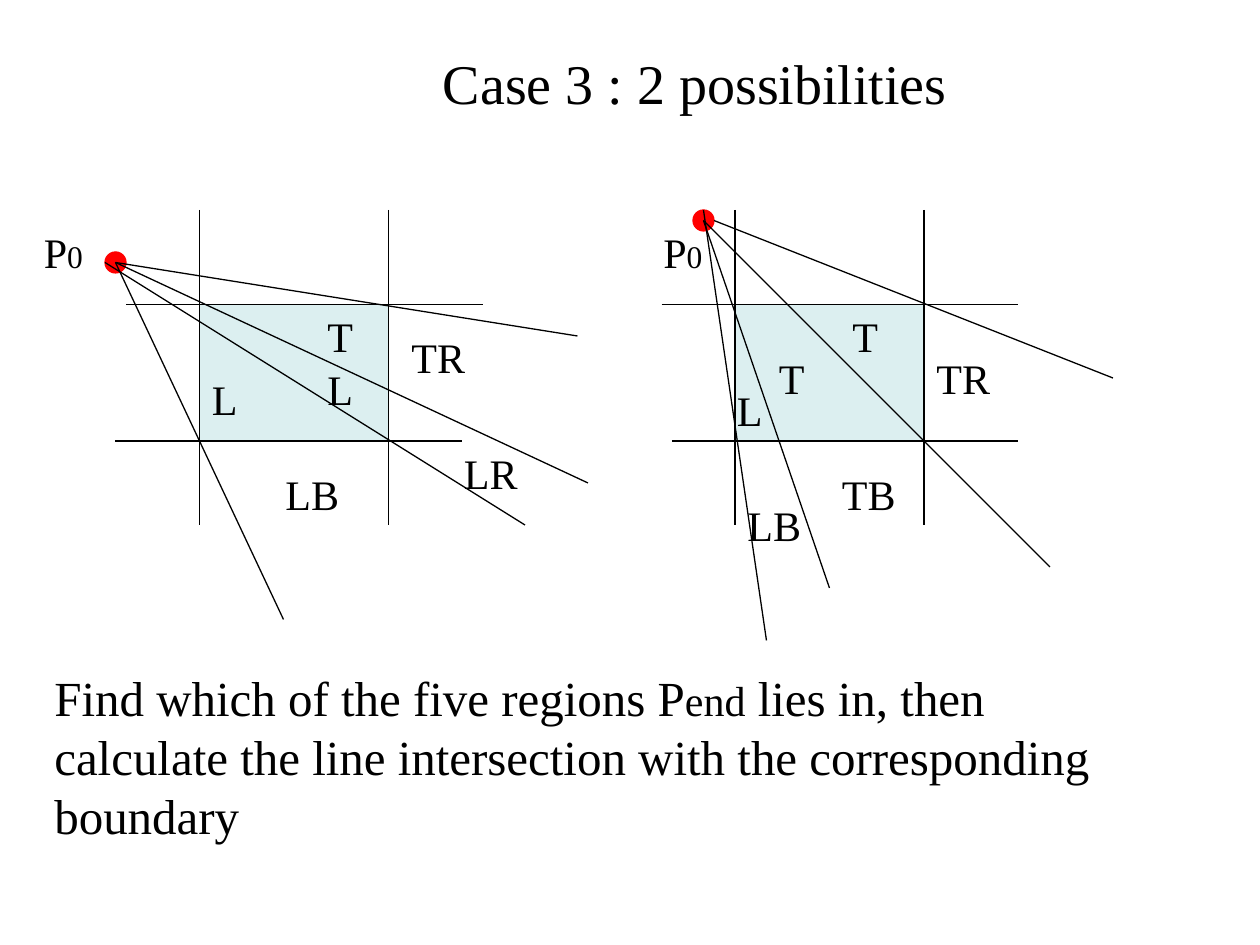
from lxml import etree
from pptx import Presentation
from pptx import util as u
from pptx.dml.color import RGBColor
from pptx.enum import shapes, text
from pptx.oxml.ns import qn

COLORS = {"ink": "000000", "point": "FF0000", "window": "BBE0E3"}
FONT = "Times New Roman"
WINDOW_TOP, WINDOW_WIDTH, WINDOW_HEIGHT = 174, 108, 78
WINDOW_BOTTOM = WINDOW_TOP + WINDOW_HEIGHT
GRID_TOP, GRID_BOTTOM = 120, 300
POINT_SIZE = 12

CASES = [
    {
        "window_left": 114,
        "top_edge": (72, 276),
        "bottom_edge": (66, 264),
        "point": (60, 144),
        "point_label": (18, 126),
        "rays": [(66, 150, 162, 354), (66, 150, 330, 192),
                 (60, 150, 300, 300), (66, 150, 336, 276)],
        "regions": [("L", 114, 210), ("L", 180, 204), ("LB", 156, 264),
                    ("TR", 228, 186), ("T", 180, 174), ("LR", 258, 252)],
    },
    {
        "window_left": 420,
        "top_edge": (378, 582),
        "bottom_edge": (384, 582),
        "point": (396, 120),
        "point_label": (372, 126),
        "rays": [(408, 126, 636, 216), (402, 120, 438, 366),
                 (402, 126, 474, 336), (402, 126, 600, 324)],
        "regions": [("L", 414, 216), ("LB", 420, 282), ("TB", 474, 264),
                    ("TR", 528, 198), ("T", 480, 174), ("T", 438, 198)],
    },
]


def color(name):
    return RGBColor.from_string(COLORS[name])


def add_line(slide, x1, y1, x2, y2):
    line = slide.shapes.add_connector(
        shapes.MSO_CONNECTOR.STRAIGHT, u.Pt(x1), u.Pt(y1), u.Pt(x2), u.Pt(y2))
    line.line.color.rgb = color("ink")
    line.line.width = u.Pt(0.75)
    etree.SubElement(line._element.spPr, qn("a:effectLst"))


def add_figure(slide, preset, left, top, width, height, fill, outline, alpha=None):
    figure = slide.shapes.add_shape(
        preset, u.Pt(left), u.Pt(top), u.Pt(width), u.Pt(height))
    figure.shadow.inherit = False
    figure.fill.solid()
    figure.fill.fore_color.rgb = color(fill)
    figure.line.color.rgb = color(outline)
    figure.line.width = u.Pt(0.75)
    if alpha is not None:
        tint = figure._element.spPr.find(qn("a:solidFill"))[0]
        etree.SubElement(tint, qn("a:alpha"), val=str(alpha * 1000))


def add_text(slide, left, top, width, height, runs):
    box = slide.shapes.add_textbox(u.Pt(left), u.Pt(top), u.Pt(width), u.Pt(height))
    frame = box.text_frame
    frame.word_wrap = True
    frame.auto_size = text.MSO_AUTO_SIZE.SHAPE_TO_FIT_TEXT
    for words, size in runs:
        run = frame.paragraphs[0].add_run()
        run.text = words
        run.font.size = u.Pt(size)
        run.font.name = FONT
        run.font.color.rgb = color("ink")


def add_case(slide, case):
    left = case["window_left"]
    for x in (left, left + WINDOW_WIDTH):
        add_line(slide, x, GRID_TOP, x, GRID_BOTTOM)
    for edge, y in (("top_edge", WINDOW_TOP), ("bottom_edge", WINDOW_BOTTOM)):
        start, end = case[edge]
        add_line(slide, start, y, end, y)
    add_text(slide, *case["point_label"], 102, 36, [("P", 24), ("0", 18)])
    add_figure(slide, shapes.MSO_SHAPE.OVAL, *case["point"],
               POINT_SIZE, POINT_SIZE, "point", "point")
    add_figure(slide, shapes.MSO_SHAPE.RECTANGLE, left, WINDOW_TOP,
               WINDOW_WIDTH, WINDOW_HEIGHT, "window", "ink", alpha=50)
    for ray in case["rays"]:
        add_line(slide, *ray)
    for name, x, y in case["regions"]:
        add_text(slide, x, y, 48, 36, [(name, 24)])


def main():
    deck = Presentation()
    deck.slide_width, deck.slide_height = u.Pt(720), u.Pt(540)
    slide = deck.slides.add_slide(deck.slide_layouts[6])
    add_text(slide, 246, 24, 348, 45, [("Case 3 : 2 possibilities", 32)])
    for case in CASES:
        add_case(slide, case)
    add_text(slide, 24, 378, 606, 108, [
        ("Find which of the five regions P", 28),
        ("end", 24),
        (" lies in, then calculate the line intersection"
         " with the corresponding boundary", 28),
    ])
    deck.save("out.pptx")


if __name__ == "__main__":
    main()
